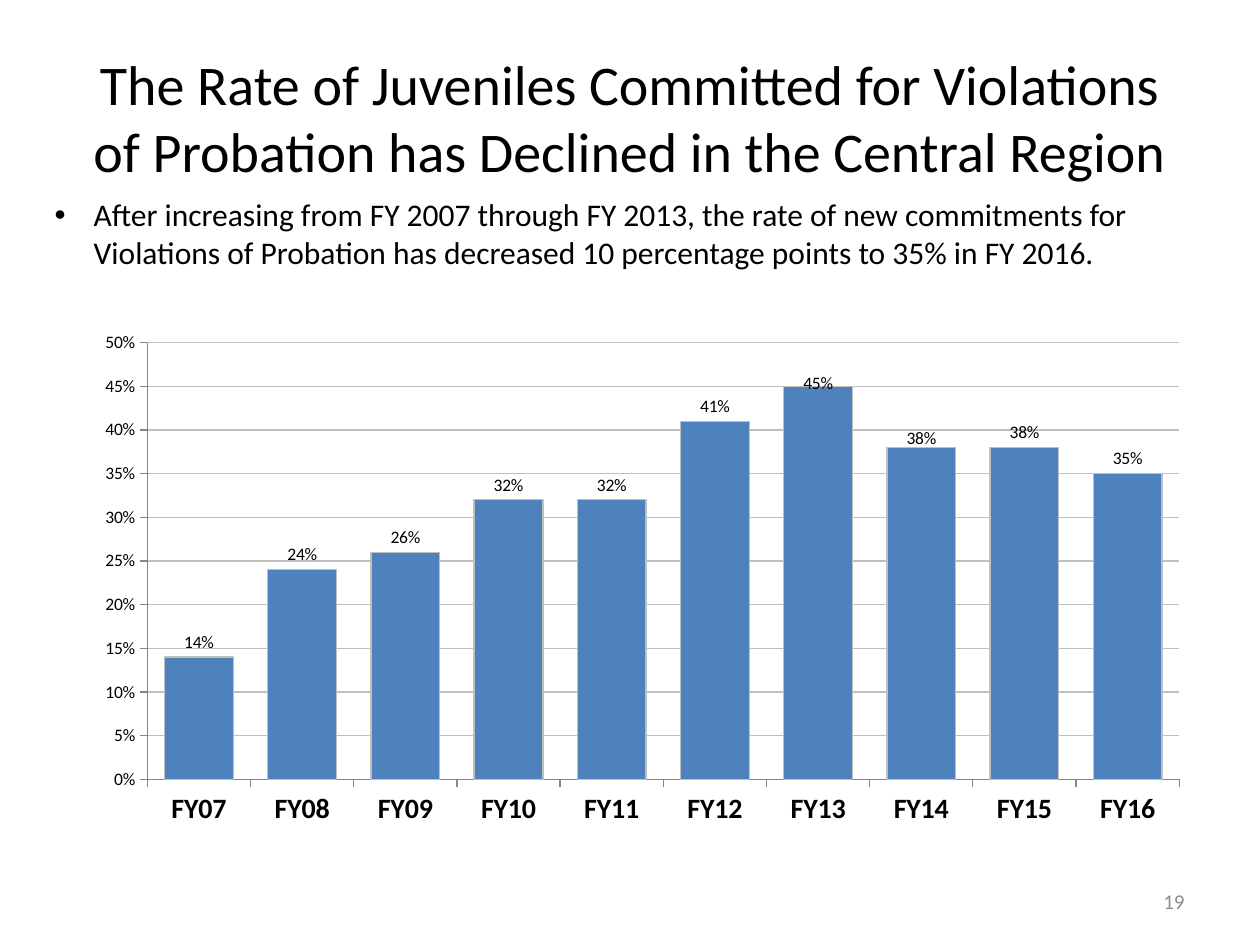
from dataclasses import dataclass

from lxml import etree
from pptx import Presentation
from pptx import util as u
from pptx.chart.data import CategoryChartData
from pptx.dml.color import RGBColor
from pptx.enum import chart as ch
from pptx.enum import text
from pptx.oxml.ns import qn

PX_PER_INCH = 126
FONT = "Calibri"
BLACK = RGBColor(0x00, 0x00, 0x00)
GREY = RGBColor(0x8C, 0x8C, 0x8C)
RULE = RGBColor(0xBF, 0xBF, 0xBF)
AXIS = RGBColor(0x86, 0x86, 0x86)
BLUE = RGBColor(0x4F, 0x81, 0xBD)

RATES = dict(FY07=0.14, FY08=0.24, FY09=0.26, FY10=0.32, FY11=0.32,
             FY12=0.41, FY13=0.45, FY14=0.38, FY15=0.38, FY16=0.35)
LOWERED_LABELS = {6: 0.02, 7: 0.01}  # point index: share of the chart height
PLOT_AREA = dict(x=0.07, y=0.08, w=0.91, h=0.72)


@dataclass(frozen=True)
class Box:
    left: int
    top: int
    width: int
    height: int

    def emu(self) -> list[int]:
        return [px(n) for n in (self.left, self.top, self.width, self.height)]


@dataclass(frozen=True)
class Words:
    content: str
    box: Box
    size: int
    color: RGBColor
    align: text.PP_ALIGN
    anchor: text.MSO_ANCHOR


TITLE = Words("The Rate of Juveniles Committed for Violations of Probation "
              "has Declined in the Central Region", Box(63, 38, 1134, 157),
              32, BLACK, text.PP_ALIGN.CENTER, text.MSO_ANCHOR.MIDDLE)
BODY = Words("After increasing from FY 2007 through FY 2013, the rate of new "
             "commitments for Violations of Probation has decreased "
             "10 percentage points to 35% in FY 2016.", Box(42, 189, 1187, 89),
             18, BLACK, text.PP_ALIGN.LEFT, text.MSO_ANCHOR.TOP)
NUMBER = Words("19", Box(903, 876, 294, 50), 12, GREY,
               text.PP_ALIGN.RIGHT, text.MSO_ANCHOR.MIDDLE)
CHART_BOX = Box(68, 294, 1134, 607)


def px(n: int) -> int:
    return round(n * u.Inches(1) / PX_PER_INCH)


def set_all(obj, **values) -> None:
    for name, value in values.items():
        setattr(obj, name, value)


def set_font(font, size: int, color: RGBColor, bold: bool = False) -> None:
    set_all(font, name=FONT, size=u.Pt(size), bold=bold)
    font.color.rgb = color


def set_line(line, color: RGBColor) -> None:
    line.color.rgb = color
    line.width = u.Pt(0.75)


def write(sp, words: Words) -> None:
    set_all(sp, **dict(zip(("left", "top", "width", "height"), words.box.emu())))
    tf = sp.text_frame
    set_all(tf, word_wrap=True, auto_size=text.MSO_AUTO_SIZE.NONE,
            vertical_anchor=words.anchor)
    p = tf.paragraphs[0]
    set_all(p, alignment=words.align, space_before=u.Pt(0))
    r = p.add_run()
    r.text = words.content
    set_font(r.font, words.size, words.color)


def add_layout(parent, index: int, **values) -> None:
    """Place a chart part by hand, in shares of the chart's size."""
    for old in parent.findall(qn("c:layout")):
        parent.remove(old)
    layout = etree.Element(qn("c:layout"))
    manual = etree.SubElement(layout, qn("c:manualLayout"))
    for name, value in values.items():
        etree.SubElement(manual, qn(f"c:{name}")).set("val", str(value))
    parent.insert(index, layout)


def add_rate_chart(s) -> None:
    data = CategoryChartData(number_format="0%")
    data.categories = list(RATES)
    data.add_series("Series 1", list(RATES.values()))
    chart = s.shapes.add_chart(ch.XL_CHART_TYPE.COLUMN_CLUSTERED,
                               *CHART_BOX.emu(), data).chart
    set_all(chart, has_legend=False, has_title=False)
    set_font(chart.font, 10, BLACK)

    values, years = chart.value_axis, chart.category_axis
    set_all(values, minimum_scale=0, maximum_scale=0.5, major_unit=0.05,
            has_major_gridlines=True)
    set_all(values.tick_labels, number_format="0%", number_format_is_linked=False)
    set_line(values.major_gridlines.format.line, RULE)
    set_font(years.tick_labels.font, 16, BLACK, bold=True)
    for axis in (values, years):
        axis.major_tick_mark = ch.XL_TICK_MARK.OUTSIDE
        set_line(axis.format.line, AXIS)

    plot = chart.plots[0]
    set_all(plot, gap_width=50, vary_by_categories=False)
    series = plot.series[0]
    series.format.fill.solid()
    series.format.fill.fore_color.rgb = BLUE
    set_line(series.format.line, RULE)
    set_all(series.data_labels, show_value=True, number_format="0%",
            number_format_is_linked=False,
            position=ch.XL_LABEL_POSITION.OUTSIDE_END)
    for index, shift in LOWERED_LABELS.items():
        series.points[index].data_label.position = ch.XL_LABEL_POSITION.OUTSIDE_END
        label = series.data_labels._element.find(
            f"{qn('c:dLbl')}[{list(LOWERED_LABELS).index(index) + 1}]")
        add_layout(label, 1, x=0, y=shift)
    add_layout(chart._chartSpace.chart.plotArea, 0, layoutTarget="inner",
               xMode="edge", yMode="edge", **PLOT_AREA)


def main() -> None:
    prs = Presentation()
    set_all(prs, slide_width=u.Inches(10), slide_height=u.Inches(7.5))
    s = prs.slides.add_slide(prs.slide_layouts[1])
    write(s.shapes.title, TITLE)
    body = s.placeholders[1]
    write(body, BODY)
    pPr = body.text_frame.paragraphs[0]._p.get_or_add_pPr()
    pPr.set("marL", str(px(39)))
    pPr.set("indent", str(-px(39)))
    write(s.shapes.add_textbox(*NUMBER.box.emu()), NUMBER)
    add_rate_chart(s)
    prs.save("out.pptx")


if __name__ == "__main__":
    main()
